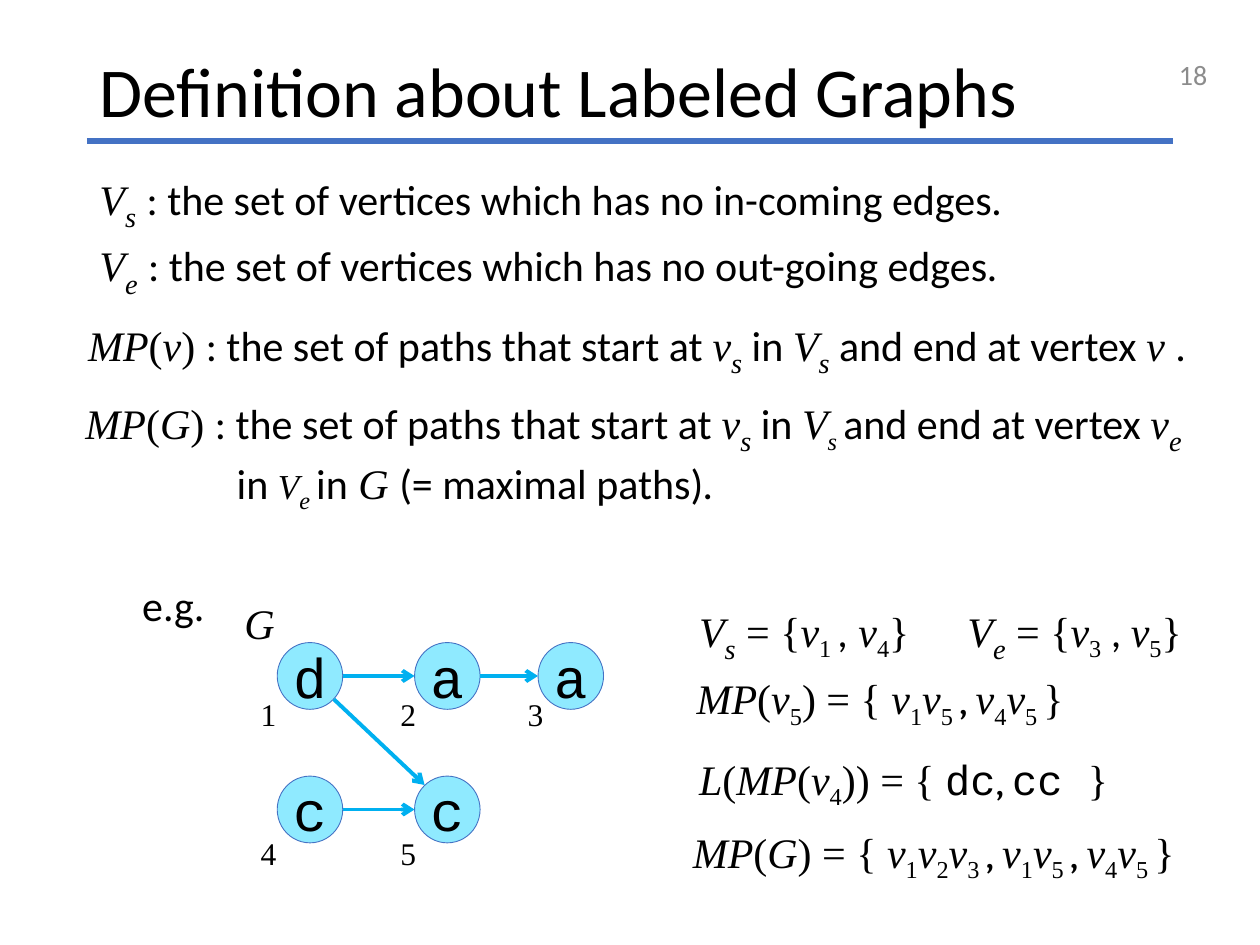
"""Builds the slide that defines vertex sets and path sets of labeled graphs."""
from lxml import etree
from pptx import Presentation, util as u
from pptx.dml.color import RGBColor
from pptx.enum import shapes, text
from pptx.oxml.ns import qn

TIMES, SANS, MONO = "Times New Roman", "Calibri", "Courier New"
THEME = {
    "ink": "000000", "rule": "4472C4", "node": "8FEAFF", "edge": "00B0F0", "page": "8C8C8C",
    "h": {"name": SANS, "size": 40},
    "p": {"name": SANS, "size": 16, "ink": "page"},
    "c": {"name": SANS, "size": 24},
    "ci": {"name": SANS, "size": 24, "italic": True},
    "m": {"name": "Cambria", "size": 24},
    "k": {"name": MONO, "size": 24},
    "node text": {"name": MONO, "size": 32},
    "id": {"name": TIMES, "size": 18},
    "t": {"name": TIMES, "size": 24},
    "n": {"name": TIMES, "size": 24, "sub": True},
    "i": {"name": TIMES, "size": 24, "italic": True},
    "i20": {"name": TIMES, "size": 20, "italic": True},
    "s24": {"name": TIMES, "size": 24, "italic": True, "sub": True},
    "s": {"name": TIMES, "size": 28, "italic": True, "sub": True},
}

deck = Presentation()
deck.slide_width, deck.slide_height = u.Inches(10), u.Inches(7.5)
CELL = deck.slide_width / 10
slide = deck.slides.add_slide(deck.slide_layouts[5])


def grid(*cells):
    return [round(n * CELL) for n in cells]


def write(shape, marks, wrap=True, align=text.PP_ALIGN.LEFT, anchor=text.MSO_ANCHOR.TOP):
    """Fill a shape from lines of style:text runs parted by bars."""
    frame = shape.text_frame
    form = {"word_wrap": wrap, "auto_size": text.MSO_AUTO_SIZE.NONE, "vertical_anchor": anchor}
    for key, val in form.items():
        setattr(frame, key, val)
    for row, line in enumerate(marks.split("\n")):
        para = frame.add_paragraph() if row else frame.paragraphs[0]
        para.alignment = align
        for mark in line.split("|"):
            style, _, words = mark.partition(":")
            look = THEME[style]
            run = para.add_run()
            run.text = words
            form = {"name": look["name"], "size": u.Pt(look["size"]),
                    "italic": look.get("italic", False)}
            for key, val in form.items():
                setattr(run.font, key, val)
            run.font.color.rgb = RGBColor.from_string(THEME[look.get("ink", "ink")])
            if look.get("sub"):
                run.font._element.set("baseline", "-25000")
    return frame


MID = text.MSO_ANCHOR.MIDDLE
title = slide.shapes.title
title.left, title.top, title.width, title.height = grid(0.69, 0.4, 8.62, 0.71)
write(title, "h:Definition about Labeled Graphs", anchor=MID).paragraphs[0].line_spacing = 0.9

page = slide.shapes.add_textbox(*grid(7.43, 0.39, 2.25, 0.4))
write(page, "p:18", align=text.PP_ALIGN.RIGHT, anchor=MID)

START = "c:: the set of paths that start at |i:v|s:s|c: in |i:V"
lines = [
    (0.69, 1.27, 8.42, "i:V|s:s|t: |c:: the set of vertices which has no in-coming edges|ci:."),
    (0.69, 1.8, 8.42, "i:V|s:e|t: |c:: the set of vertices which has no out-going edges|ci:."),
    (0.6, 2.43, 9.08, f"i:MP|t:(|i:v|t:) |{START}|s:s|c: and end at vertex |i:v |c:."),
    (1.03, 4.55, 0.7, "c:e.g."),
    (1.84, 4.69, 0.75, "i:G"),
    (5.45, 4.7, 2.1, "i:V|s:s|t: = {|i:v|n:1 |c:,|i: v|n:4|t:}"),
    (7.58, 4.7, 2.1, "i:V|s:e|t: = {|i:v|n:3|c: , |i:v|n:5|t:}"),
    (5.43, 5.29, 4.15, "i:MP|t:(|i:v|n:5|t:) = { |i:v|n:1|i:v|n:5 |m:, |i:v|n:4|i:v|n:5 |t:}"),
    (5.45, 5.93, 3.9, "i:L|t:(|i:MP|t:(|i:v|n:4|t:)) = { |k:dc|m:, |k:cc |t:}"),
    (5.4, 6.51, 4.6, "i:MP|t:(|i:G|t:) = { |i:v|n:1|i:v|n:2|i:v|n:3 |m:, "
                     "|i:v|n:1|i:v|n:5 |m:, |i:v|n:4|i:v|n:5 |t:}"),
]
for left, top, wide, marks in lines:
    write(slide.shapes.add_textbox(*grid(left, top, wide, 0.5)), marks, wrap=wide > 3)

goal = slide.shapes.add_textbox(*grid(0.58, 3.05, 9.42, 0.91))
frame = write(goal, f"i:MP|t:(|i:G|t:) |{START}|s24:s |c:and end at vertex |i:v|s:e\n"
                    "c:in |i20:V|s24:e |c:in|i: G |c:(= maximal paths)|ci:.")
frame.paragraphs[1]._p.get_or_add_pPr().set("marL", str(u.Inches(1.2)))

cols = [(2.2, 1.97), (3.29, 3.08), (4.27, 4.09)]
rows = [(5.1, 5.47), (6.16, 6.57)]
WIDE, HIGH = 0.52, 0.53
nodes = [("d", 0, 0), ("a", 1, 0), ("a", 2, 0), ("c", 0, 1), ("c", 1, 1)]
for num, (name, col, row) in enumerate(nodes, 1):
    (left, side), (top, low) = cols[col], rows[row]
    node = slide.shapes.add_shape(shapes.MSO_SHAPE.OVAL, *grid(left, top, WIDE, HIGH))
    node.shadow.inherit = False
    node.fill.solid()
    node.fill.fore_color.rgb = RGBColor.from_string(THEME["node"])
    node.line.color.rgb = RGBColor.from_string(THEME["rule"])
    node.line.width = u.Pt(0.5)
    write(node, f"node text:{name}", False, text.PP_ALIGN.CENTER, MID)
    write(slide.shapes.add_textbox(*grid(side, low, 0.33, 0.4)), f"id:{num}", False)

high, low = [top + HIGH / 2 for top, _ in rows]
one, two, three = [left for left, _ in cols]
links = [
    (0.69, 1.12, 9.31, 1.12, "rule", 3),
    (one + WIDE, high, two, high, "edge", 2.25),
    (two + WIDE, high, three, high, "edge", 2.25),
    (one + WIDE, low, two, low, "edge", 2.25),
    (2.65, 5.55, 3.37, 6.23, "edge", 2.25),
]
for *ends, tone, thick in links:
    link = slide.shapes.add_connector(shapes.MSO_CONNECTOR.STRAIGHT, *grid(*ends))
    link.line.color.rgb = RGBColor.from_string(THEME[tone])
    link.line.width = u.Pt(thick)
    if tone == "edge":
        etree.SubElement(link.line._get_or_add_ln(), qn("a:tailEnd"), type="arrow")
    etree.SubElement(link._element.spPr, qn("a:effectLst"))

deck.save("out.pptx")
